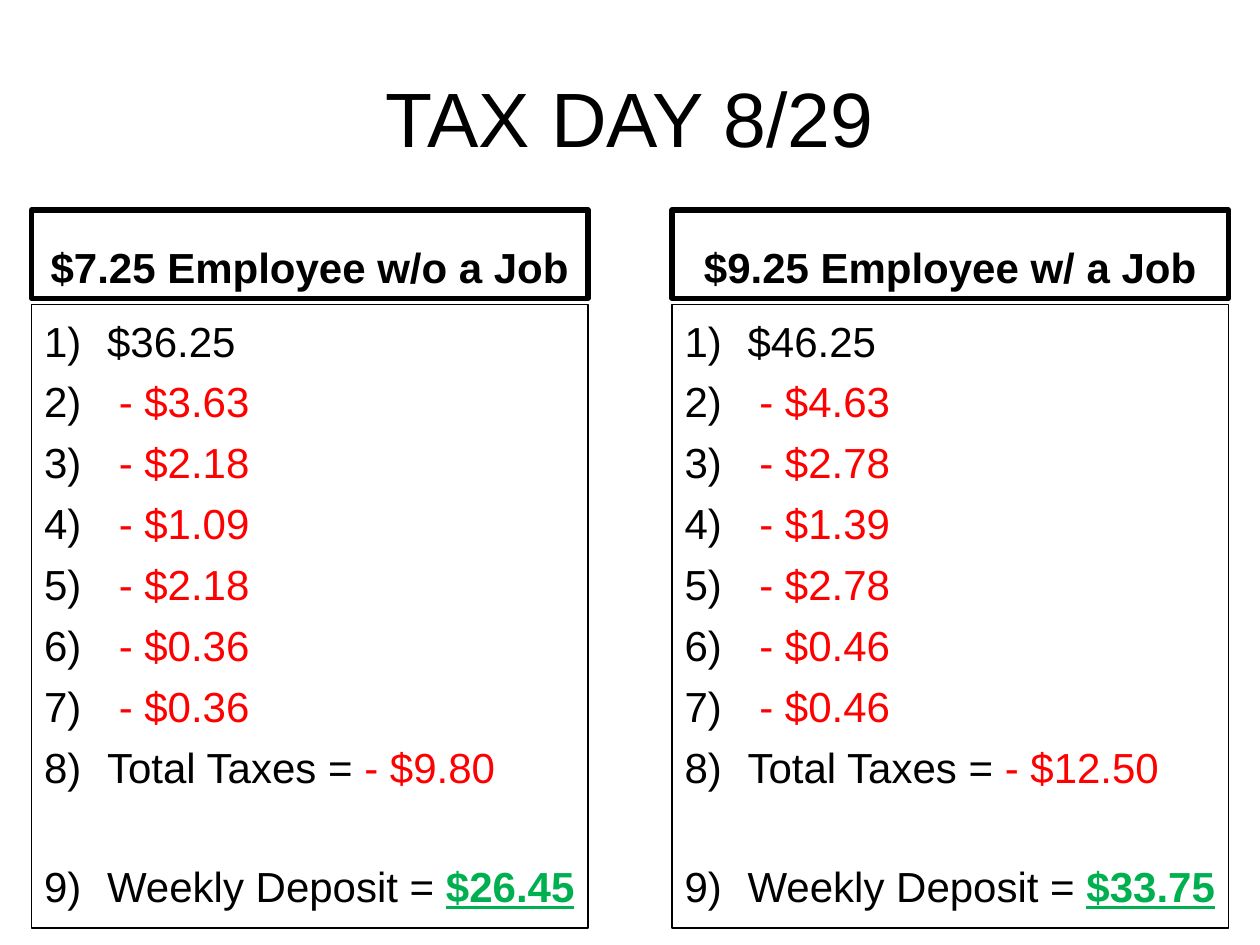
import pptx
import pptx.util
import pptx.dml.color
import pptx.enum.text
import pptx.oxml
import pptx.oxml.ns
import lxml.etree

Pt = pptx.util.Pt
ALIGN = pptx.enum.text.PP_ALIGN
ANCHOR = pptx.enum.text.MSO_ANCHOR
COLORS = {"text": "000000", "tax": "FF0000", "deposit": "00B050"}


class TaxSlide:
    font_name = "Arial"
    body_size = 24
    title_size = 44
    item_gap = 6
    deposit_gap = 39.5
    number_indent = 36

    def __init__(self, deck):
        self.slide = deck.slides.add_slide(deck.slide_layouts[4])

    def color(self, key):
        return pptx.dml.color.RGBColor.from_string(COLORS[key])

    def place(self, index, left, top, width, height, anchor, line_width=None):
        box = self.slide.placeholders[index]
        bounds = {"left": left, "top": top, "width": width, "height": height}
        for name, value in bounds.items():
            setattr(box, name, Pt(value))
        frame_format = {
            "word_wrap": True,
            "auto_size": pptx.enum.text.MSO_AUTO_SIZE.NONE,
            "vertical_anchor": anchor,
        }
        for name, value in frame_format.items():
            setattr(box.text_frame, name, value)
        if line_width:
            box.line.color.rgb = self.color("text")
            box.line.width = Pt(line_width)
        return box

    def add_span(self, para, text, color="text", **font_format):
        span = para.add_run()
        span.text = text
        font_format = {"name": self.font_name, "size": Pt(self.body_size), **font_format}
        for name, value in font_format.items():
            setattr(span.font, name, value)
        span.font.color.rgb = self.color(color)

    def add_title(self, text, *bounds):
        para = self.place(0, *bounds, ANCHOR.MIDDLE).text_frame.paragraphs[0]
        para.alignment = ALIGN.CENTER
        self.add_span(para, text, size=Pt(self.title_size))

    def add_heading(self, index, text, *bounds):
        para = self.place(index, *bounds, ANCHOR.BOTTOM, 3).text_frame.paragraphs[0]
        para.alignment = ALIGN.CENTER
        para.space_before = Pt(0)
        self.add_span(para, text, bold=True)

    def add_item(self, para, gap):
        para.space_before = Pt(gap)
        properties = para._p.get_or_add_pPr()
        properties.set("marL", str(Pt(self.number_indent)))
        properties.set("indent", str(-Pt(self.number_indent)))
        number = lxml.etree.SubElement(properties, pptx.oxml.ns.qn("a:buAutoNum"))
        number.set("type", "arabicParenR")

    def add_list(self, index, pay, taxes, total, deposit, *bounds):
        frame = self.place(index, *bounds, ANCHOR.TOP, 0.75).text_frame
        frame.margin_top = Pt(6)
        items = [
            (pay, "", "text"),
            *((" ", f"- {tax}", "tax") for tax in taxes),
            ("Total Taxes = ", f"- {total}", "tax"),
            ("Weekly Deposit = ", deposit, "deposit"),
        ]
        for position, (label, amount, color) in enumerate(items):
            para = frame.add_paragraph() if position else frame.paragraphs[0]
            is_deposit = color == "deposit"
            gap = self.deposit_gap if is_deposit else self.item_gap
            self.add_item(para, gap if position else 0)
            self.add_span(para, label)
            if amount:
                emphasis = {"bold": True, "underline": True} if is_deposit else {}
                self.add_span(para, amount, color, **emphasis)


def main():
    deck = pptx.Presentation()
    deck.slide_width, deck.slide_height = Pt(720), Pt(540)
    page = TaxSlide(deck)
    page.add_title("TAX DAY 8/29", 36, 21.6, 648, 90)

    columns = [
        ("$7.25 Employee w/o a Job", "$36.25",
         ["$3.63", "$2.18", "$1.09", "$2.18", "$0.36", "$0.36"], "$9.80", "$26.45"),
        ("$9.25 Employee w/ a Job", "$46.25",
         ["$4.63", "$2.78", "$1.39", "$2.78", "$0.46", "$0.46"], "$12.50", "$33.75"),
    ]
    margin, width = 18, 318
    pitch = 720 - 2 * margin - width
    for column, (heading, *amounts) in enumerate(columns):
        left = margin + column * pitch
        page.add_heading(1 + 2 * column, heading, left, 120, width, 50.4)
        page.add_list(2 + 2 * column, *amounts, left, 174, width, 356.4)

    deck.save("out.pptx")


if __name__ == "__main__":
    main()
